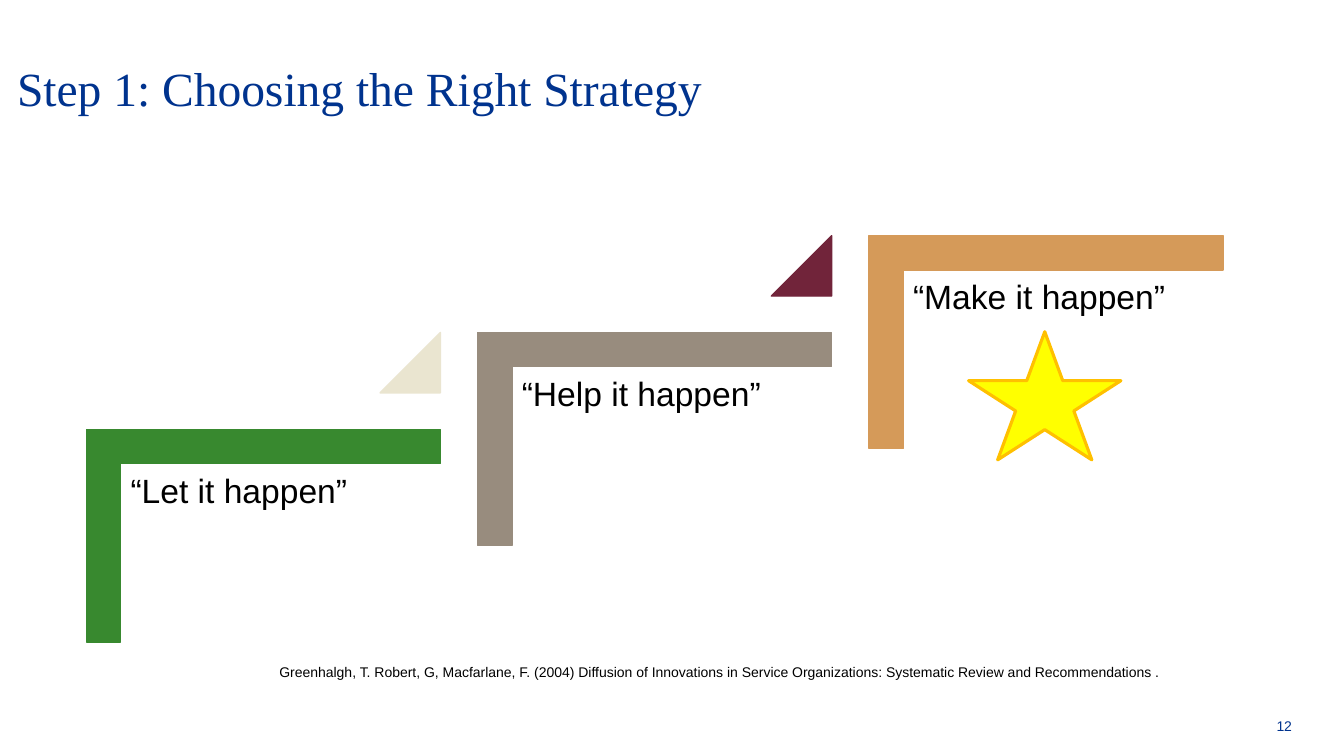
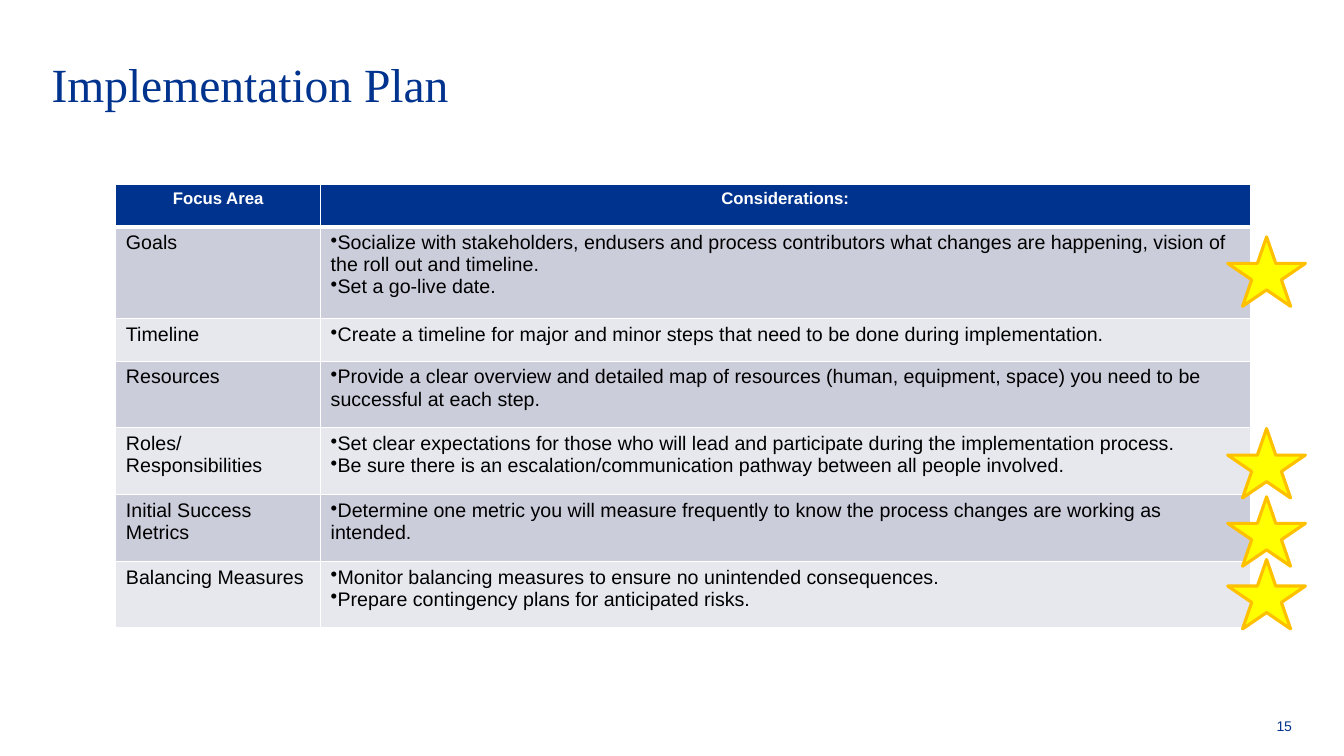
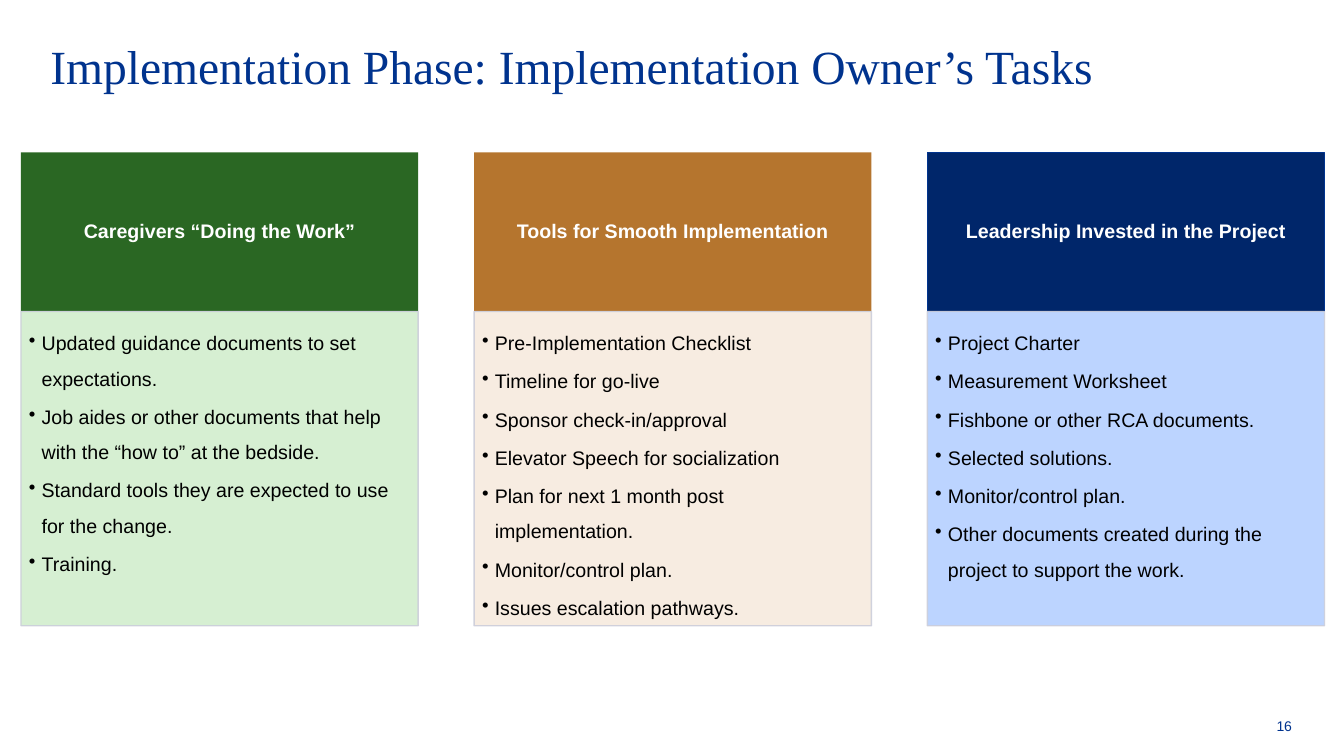
from dataclasses import dataclass

from lxml.etree import SubElement
from pptx import Presentation
from pptx.dml.color import RGBColor as RGB
from pptx.enum.shapes import MSO_SHAPE as Kind
from pptx.enum.text import MSO_ANCHOR as Anchor, PP_ALIGN as Align
from pptx.oxml.ns import qn
from pptx.util import Cm, Pt


@dataclass(frozen=True)
class Type:
    size: float
    color: str
    font: str = "Arial"
    bold: bool = False
    align: Align = Align.LEFT
    lead: object = None
    after: float = 0


class Theme:
    navy, white, black = "00338E", "FFFFFF", "000000"
    bands = "CBCDDB", "E7E8EE"
    edge = "CCCEDB"
    star, rim = "FFFF00", "FFC000"
    green, taupe, tan = "38892F", "988C7E", "D59A59"
    cream, wine = "EAE5D0", "71243A"

    title = Type(34, navy, "Times New Roman", lead=Pt(34))
    page = Type(10, navy, align=Align.RIGHT)
    cite = Type(10, black, lead=Pt(21))
    step = Type(24, black, lead=0.9)
    head = Type(12, white, bold=True, align=Align.CENTER)
    cell = Type(14, black)
    card = Type(14, white, bold=True, align=Align.CENTER, lead=0.9)
    item = Type(14, black, lead=1.5, after=2.1)


def bullet(para, indent):
    props = para._p.get_or_add_pPr()
    props.set("marL", str(Cm(indent)))
    props.set("indent", str(-Cm(indent)))
    SubElement(props, qn("a:buChar"), char="•")


def write(frame, lines, style, indent=None):
    """Fill a frame, one paragraph a line; an indent makes them bullets."""
    frame.text = "\n".join(lines)
    for para in frame.paragraphs:
        if indent is not None:
            bullet(para, indent)
        para.alignment = style.align
        para.line_spacing = style.lead
        para.space_after = Pt(style.after)
        for run in para.runs:
            font = run.font
            font.name, font.size, font.bold = style.font, Pt(style.size), style.bold
            font.color.rgb = RGB.from_string(style.color)


def inset(frame, left, top, right, bottom):
    frame.margin_left, frame.margin_top = Cm(left), Cm(top)
    frame.margin_right, frame.margin_bottom = Cm(right), Cm(bottom)


def label(slide, box, text, style, anchor=Anchor.TOP, pad=0):
    frame = slide.shapes.add_textbox(*map(Cm, box)).text_frame
    frame.word_wrap = True
    frame.vertical_anchor = anchor
    inset(frame, pad, pad, pad, pad)
    write(frame, [text], style)


def block(slide, kind, box, fill, line=None, width=1):
    shape = slide.shapes.add_shape(kind, *map(Cm, box))
    shape.shadow.inherit = False
    shape.fill.solid()
    shape.fill.fore_color.rgb = RGB.from_string(fill)
    if line:
        shape.line.color.rgb = RGB.from_string(line)
        shape.line.width = Pt(width)
    else:
        shape.line.fill.background()
    return shape


def fade(shape, share):
    for color in shape.element.spPr.iter(qn("a:srgbClr")):
        SubElement(color, qn("a:alpha"), val=str(share * 1000))


def star(slide, box):
    block(slide, Kind.STAR_5_POINT, box, Theme.star, Theme.rim, 2.25)


def start(deck, title, left, base, page):
    """Add a slide with its page number and a title that ends at base."""
    slide = deck.slides.add_slide(deck.slide_layouts[6])
    label(slide, (31.19, 17.86, 1.37, 0.64), page, Theme.page, Anchor.BOTTOM)
    tall = 1.28
    label(slide, (left, base - tall, 31.29, tall), title, Theme.title, Anchor.BOTTOM)
    return slide


def stair(slide, box, text, fill, rise, flag):
    """Draw one step; its flag points to the next one."""
    left, top, wide, tall = box
    turned = left + (wide - tall) / 2, top + (tall - wide) / 2, tall, wide
    angle = block(slide, Kind.CORNER, turned, fill, fill)
    angle.rotation = 90
    angle.adjustments[0] = angle.adjustments[1] = 0.161
    label(slide, (left + 0.86, top + 0.89, 8.05, 7.06), text, Theme.step, pad=0.25)
    if flag:
        side = 1.52
        spot = left + wide - side, top - rise, side, side
        mark = block(slide, Kind.ISOSCELES_TRIANGLE, spot, flag, flag)
        mark.adjustments[0] = 1


def choice(deck):
    slide = start(deck, "Step 1: Choosing the Right Strategy", 0.43, 2.92, "12")
    run, rise = 9.86, 2.44
    steps = [
        ("“Let it happen”", Theme.green, Theme.cream),
        ("“Help it happen”", Theme.taupe, Theme.wine),
        ("“Make it happen”", Theme.tan, None),
    ]
    for i, (text, fill, flag) in enumerate(steps):
        box = 2.18 + i * run, 10.82 - i * rise, 8.92, 5.36
        stair(slide, box, text, fill, rise, flag)
    cite = (
        "Greenhalgh, T. Robert, G, Macfarlane, F. (2004) Diffusion of Innovations in "
        "Service Organizations: Systematic Review and Recommendations ."
    )
    label(slide, (7.04, 16.41, 23.95, 0.64), cite, Theme.cite)
    star(slide, (24.41, 8.36, 3.84, 3.23))


def border(cell, widths):
    props = cell._tc.get_or_add_tcPr()
    for side, width in zip("LRTB", widths):
        line = SubElement(props, qn(f"a:ln{side}"), w=str(Pt(width)))
        fill = SubElement(line, qn("a:solidFill"))
        SubElement(fill, qn("a:srgbClr"), val=Theme.white)


def grid(slide, left, top, cols, rows, data):
    """Draw a table with a header row over banded rows."""
    box = left, top, sum(cols), sum(rows)
    table = slide.shapes.add_table(len(rows), len(cols), *map(Cm, box)).table
    table.first_row = table.horz_banding = False
    for col, wide in zip(table.columns, cols):
        col.width = Cm(wide)
    thin, thick = 0.75, 3
    for r, (tall, texts) in enumerate(zip(rows, data)):
        table.rows[r].height = Cm(tall)
        fill = Theme.bands[(r - 1) % 2] if r else Theme.navy
        for c, lines in enumerate(texts):
            cell = table.cell(r, c)
            border(cell, (thin, thin, thick if r == 1 else thin, thin if r else thick))
            cell.fill.solid()
            cell.fill.fore_color.rgb = RGB.from_string(fill)
            style = Theme.cell if r else Theme.head
            write(cell.text_frame, lines, style, 0 if r and c else None)


def plan(deck):
    slide = start(deck, "Implementation Plan", 1.3, 2.82, "15")
    data = [
        (["Focus Area"], ["Considerations:"]),
        (["Goals"], [
            "Socialize with stakeholders, endusers and process contributors what "
            "changes are happening, vision of the roll out and timeline.",
            "Set a go-live date."]),
        (["Timeline"], [
            "Create a timeline for major and minor steps that need to be done "
            "during implementation."]),
        (["Resources"], [
            "Provide a clear overview and detailed map of resources (human, "
            "equipment, space) you need to be successful at each step."]),
        (["Roles/", "Responsibilities"], [
            "Set clear expectations for those who will lead and participate during "
            "the implementation process.",
            "Be sure there is an escalation/communication pathway between all "
            "people involved."]),
        (["Initial Success Metrics"], [
            "Determine one metric you will measure frequently to know the process "
            "changes are working as intended."]),
        (["Balancing Measures"], [
            "Monitor balancing measures to ensure no unintended consequences.",
            "Prepare contingency plans for anticipated risks."]),
    ]
    rows = [1.07, 2.31, 1.07] + [1.68] * 4
    grid(slide, 2.92, 4.65, (5.16, 23.42), rows, data)
    for top in (5.97, 10.8, 12.52, 14.1):
        star(slide, (30.94, top, 1.96, 1.75))


def card(slide, box, title, items, dark, pale, line):
    """Draw a heading block on top of a pale block of bullets."""
    left, top, wide, tall = box
    cap = 4.01
    head = block(slide, Kind.RECTANGLE, (left, top, wide, cap), dark, line)
    frame = head.text_frame
    frame.vertical_anchor = Anchor.MIDDLE
    inset(frame, 0.28, 0.15, 0.28, 0.15)
    write(frame, [title], Theme.card)

    body = block(slide, Kind.RECTANGLE, (left, top + cap, wide, tall - cap), pale, Theme.edge)
    fade(body, 90)
    frame = body.text_frame
    frame.vertical_anchor = Anchor.TOP
    inset(frame, 0.2, 0.2, 0.28, 0.3)
    write(frame, items, Theme.item, 0.32)


def tasks(deck):
    title = "Implementation Phase: Implementation Owner’s Tasks"
    slide = start(deck, title, 1.27, 2.36, "16")
    cards = [
        ("Caregivers “Doing the Work”", [
            "Updated guidance documents to set expectations.",
            "Job aides or other documents that help with the “how to” at the bedside.",
            "Standard tools they are expected to use for the change.",
            "Training.",
        ], "2A6723", "D2EECE", None),
        ("Tools for Smooth Implementation", [
            "Pre-Implementation Checklist",
            "Timeline for go-live",
            "Sponsor check-in/approval",
            "Elevator Speech for socialization",
            "Plan for next 1 month post implementation.",
            "Monitor/control plan.",
            "Issues escalation pathways.",
        ], "B5752E", "F7EBDE", None),
        ("Leadership Invested in the Project", [
            "Project Charter",
            "Measurement Worksheet",
            "Fishbone or other RCA documents.",
            "Selected solutions.",
            "Monitor/control plan.",
            "Other documents created during the project to support the work.",
        ], "00266A", "B5D0FF", Theme.navy),
    ]
    for i, parts in enumerate(cards):
        card(slide, (0.53 + i * 11.42, 3.84, 10.01, 11.93), *parts)


def main():
    deck = Presentation()
    deck.slide_width, deck.slide_height = Cm(33.87), Cm(19.05)
    for build in (choice, plan, tasks):
        build(deck)
    deck.save("out.pptx")


if __name__ == "__main__":
    main()
